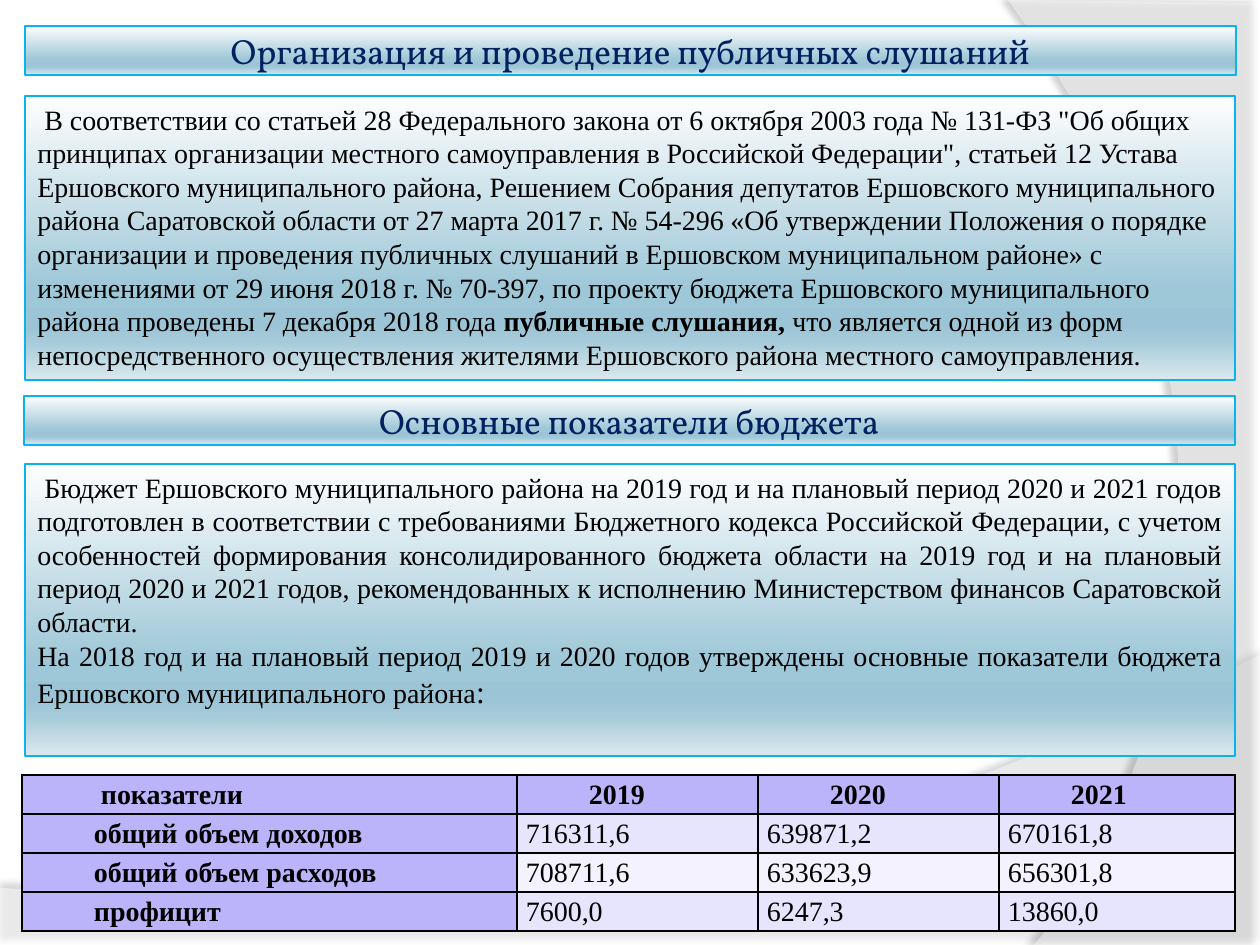
import pptx
import pptx.util
import pptx.dml.color
import pptx.enum.shapes
import pptx.enum.text
import pptx.oxml
import pptx.oxml.ns

RGB = pptx.dml.color.RGBColor
WHITE = RGB(0xFF, 0xFF, 0xFF)
BLACK = RGB(0, 0, 0)
NAVY = RGB(0x00, 0x20, 0x60)
CYAN = RGB(0x0A, 0xB3, 0xEC)
HEAD_FILL = RGB(0xBB, 0xB4, 0xFB)
BAND_FILLS = [RGB(0xE7, 0xE5, 0xFD), RGB(0xF3, 0xF2, 0xFE)]
PANEL_STOPS = [
    (0, RGB(0xFE, 0xFE, 0xFF)),
    (68, RGB(0x9E, 0xC7, 0xD7)),
    (81, RGB(0x9B, 0xC5, 0xD6)),
    (86, RGB(0xA5, 0xCA, 0xD9)),
    (100, RGB(0xDA, 0xE8, 0xEE)),
]
SERIF = "Times New Roman"
HEADING_FONT = "Vollkorn"
SCALE = 914400 / 126
ALIGN = pptx.enum.text.PP_ALIGN

LAW = (
    'В соответствии со статьей 28 Федерального закона от 6 октября 2003 года № 131-ФЗ "Об общих '
    'принципах организации местного самоуправления в Российской Федерации", статьей 12 Устава '
    "Ершовского муниципального района, Решением Собрания депутатов Ершовского муниципального "
    "района Саратовской области от 27 марта 2017 г. № 54-296\t«Об утверждении Положения о "
    "порядке организации и проведения публичных слушаний в Ершовском муниципальном районе» с "
    "изменениями от 29 июня 2018 г. № 70-397, по проекту бюджета Ершовского муниципального "
    "района проведены 7 декабря 2018 года "
)
LAW_END = (
    "что является одной из форм непосредственного осуществления жителями Ершовского района "
    "местного самоуправления."
)
BUDGET = (
    "Бюджет Ершовского муниципального района на 2019 год и на плановый период 2020 и 2021 годов "
    "подготовлен в соответствии с требованиями Бюджетного кодекса Российской Федерации, с учетом "
    "особенностей формирования консолидированного бюджета области на 2019 год и на плановый "
    "период 2020 и 2021 годов, рекомендованных к исполнению Министерством финансов Саратовской "
    "области."
)
APPROVED = (
    "На 2018 год и на плановый период 2019 и 2020 годов утверждены основные показатели бюджета "
    "Ершовского муниципального района"
)
ROWS = [
    ["показатели", "2019", "2020", "2021"],
    ["общий объем доходов", "716311,6", "639871,2", "670161,8"],
    ["общий объем расходов", "708711,6", "633623,9", "656301,8"],
    ["профицит", "7600,0", "6247,3", "13860,0"],
]


def px(n):
    return pptx.util.Emu(round(n * SCALE))


def add_xml(parent, xml):
    el = pptx.oxml.parse_xml(xml.replace(">", f" {pptx.oxml.ns.nsdecls('a')}>", 1))
    parent.append(el)
    return el


def curve(start, c1, c2, end, steps=32):
    points = []
    for i in range(1, steps + 1):
        t = i / steps
        u = 1 - t
        points.append(tuple(
            round(u**3 * a + 3 * u * u * t * b + 3 * u * t * t * c + t**3 * d)
            for a, b, c, d in zip(start, c1, c2, end)
        ))
    return points


def add_wave(slide, points, alpha, shadow_alpha, distance, angle):
    builder = slide.shapes.build_freeform(*points[0], scale=SCALE)
    builder.add_line_segments(points[1:], close=True)
    sp = builder.convert_to_shape()
    sp.fill.solid()
    sp.fill.fore_color.rgb = WHITE
    sp.line.fill.background()
    color = sp._element.spPr.find(".//" + pptx.oxml.ns.qn("a:srgbClr"))
    add_xml(color, f'<a:alpha val="{alpha * 1000}"></a:alpha>')
    add_xml(sp._element.spPr, f"""<a:effectLst><a:outerShdw blurRad="{pptx.util.Pt(4)}"
        dist="{pptx.util.Pt(distance)}" dir="{angle * 60000}" algn="ctr" rotWithShape="0">
        <a:srgbClr val="{BLACK}"><a:alpha val="{shadow_alpha * 1000}"/></a:srgbClr>
        </a:outerShdw></a:effectLst>""")


def add_panel(slide, x, y, w, h):
    return slide.shapes.add_shape(
        pptx.enum.shapes.MSO_SHAPE.RECTANGLE, px(x), px(y), px(w), px(h))


def style_panel(sp):
    sp.fill.gradient()
    stops = sp._element.spPr.find(".//" + pptx.oxml.ns.qn("a:gsLst"))
    for gs in list(stops):
        stops.remove(gs)
    for pos, color in PANEL_STOPS:
        add_xml(stops, f'<a:gs pos="{pos * 1000}"><a:srgbClr val="{color}"/></a:gs>')
    sp.fill.gradient_angle = 270
    sp.line.color.rgb = CYAN
    sp.line.width = pptx.util.Pt(0.75)
    sp.shadow.inherit = False
    tf = sp.text_frame
    tf.word_wrap = True
    tf.auto_size = pptx.enum.text.MSO_AUTO_SIZE.NONE
    return tf


def set_font(p, name, size, color, bold=False):
    p.font.name = name
    p.font.size = pptx.util.Pt(size)
    p.font.color.rgb = color
    p.font.bold = bold


def fill_heading(sp, text):
    tf = style_panel(sp)
    tf.vertical_anchor = pptx.enum.text.MSO_ANCHOR.MIDDLE
    tf.margin_left = tf.margin_right = tf.margin_top = tf.margin_bottom = px(6)
    tf.text = text
    p = tf.paragraphs[0]
    p.alignment = ALIGN.CENTER
    set_font(p, HEADING_FONT, 20, NAVY)


def fill_body(sp, paragraphs, align, tab=None):
    tf = style_panel(sp)
    tf.vertical_anchor = pptx.enum.text.MSO_ANCHOR.TOP
    for i, runs in enumerate(paragraphs):
        p = tf.add_paragraph() if i else tf.paragraphs[0]
        p.alignment = align
        pPr = p._p.get_or_add_pPr()
        if i == 0:
            pPr.set("indent", str(px(7)))
        if tab:
            add_xml(pPr, f'<a:tabLst><a:tab pos="{px(tab)}" algn="l"/></a:tabLst>')
        set_font(p, SERIF, 16, BLACK)
        for text, bold, size in runs:
            r = p.add_run()
            r.text = text
            if bold:
                r.font.bold = True
            if size:
                r.font.size = pptx.util.Pt(size)


def fill_cell(cell, text, color, heading, indent):
    cell.fill.solid()
    cell.fill.fore_color.rgb = color
    cell.margin_left = cell.margin_right = px(9)
    cell.margin_top = cell.margin_bottom = 0
    cell.text = text
    p = cell.text_frame.paragraphs[0]
    p.line_spacing = 1.15
    p.alignment = ALIGN.JUSTIFY if heading else ALIGN.LEFT
    p._p.get_or_add_pPr().set("marL", str(px(indent)))
    set_font(p, SERIF, 16, BLACK, heading)
    tcPr = cell._tc.get_or_add_tcPr()
    for i, side in enumerate(("lnL", "lnR", "lnT", "lnB")):
        ln = add_xml(tcPr, f"""<a:{side} w="{pptx.util.Pt(1)}"><a:solidFill>
            <a:srgbClr val="{BLACK}"/></a:solidFill></a:{side}>""")
        tcPr.insert(i, ln)


def add_indicators(slide, x, y, widths, row_height):
    table = slide.shapes.add_table(
        len(ROWS), len(widths), px(x), px(y), px(sum(widths)), px(row_height * len(ROWS))).table
    table.first_row = table.horz_banding = False
    for column, width in zip(table.columns, widths):
        column.width = px(width)
    for i, values in enumerate(ROWS):
        table.rows[i].height = px(row_height)
        for j, text in enumerate(values):
            heading = i == 0 or j == 0
            color = HEAD_FILL if heading else BAND_FILLS[(i - 1) % 2]
            indent = 70 if i == j == 0 else 63 if heading else 0
            fill_cell(table.cell(i, j), text, color, heading, indent)


def main():
    prs = pptx.Presentation()
    prs.slide_width, prs.slide_height = px(1260), px(945)
    slide = prs.slides.add_slide(prs.slide_layouts[5])
    title = slide.shapes.title

    bottom = [(0, 888), (0, 946), (1260, 946), (1260, 655)]
    bottom += curve((1260, 655), (704, 919), (493, 906), (0, 888))
    add_wave(slide, bottom, 45, 35, 3.5, 270)
    side = [(1260, 3), (1260, 945), (1034, 945)]
    side += curve((1034, 945), (1178, 780), (1283, 378), (1008, 0))
    add_wave(slide, side, 40, 45, 4, 180)

    slide.shapes._spTree.append(title._element)
    title.left, title.top, title.width, title.height = px(25), px(26), px(1211), px(49)
    fill_heading(title, "Организация и проведение публичных слушаний")
    law = [(LAW, False, None), ("публичные слушания, ", True, None), (LAW_END, False, None)]
    fill_body(add_panel(slide, 25, 96, 1210, 284), [law], ALIGN.LEFT, tab=715)
    fill_heading(add_panel(slide, 24, 396, 1211, 49), "Основные показатели бюджета")
    budget = [[(BUDGET, False, None)], [(APPROVED, False, None), (":", False, 18)]]
    fill_body(add_panel(slide, 25, 464, 1210, 292), budget, ALIGN.JUSTIFY)
    add_indicators(slide, 22, 775, [495, 241, 241, 236], 39)
    prs.save("out.pptx")


if __name__ == "__main__":
    main()
